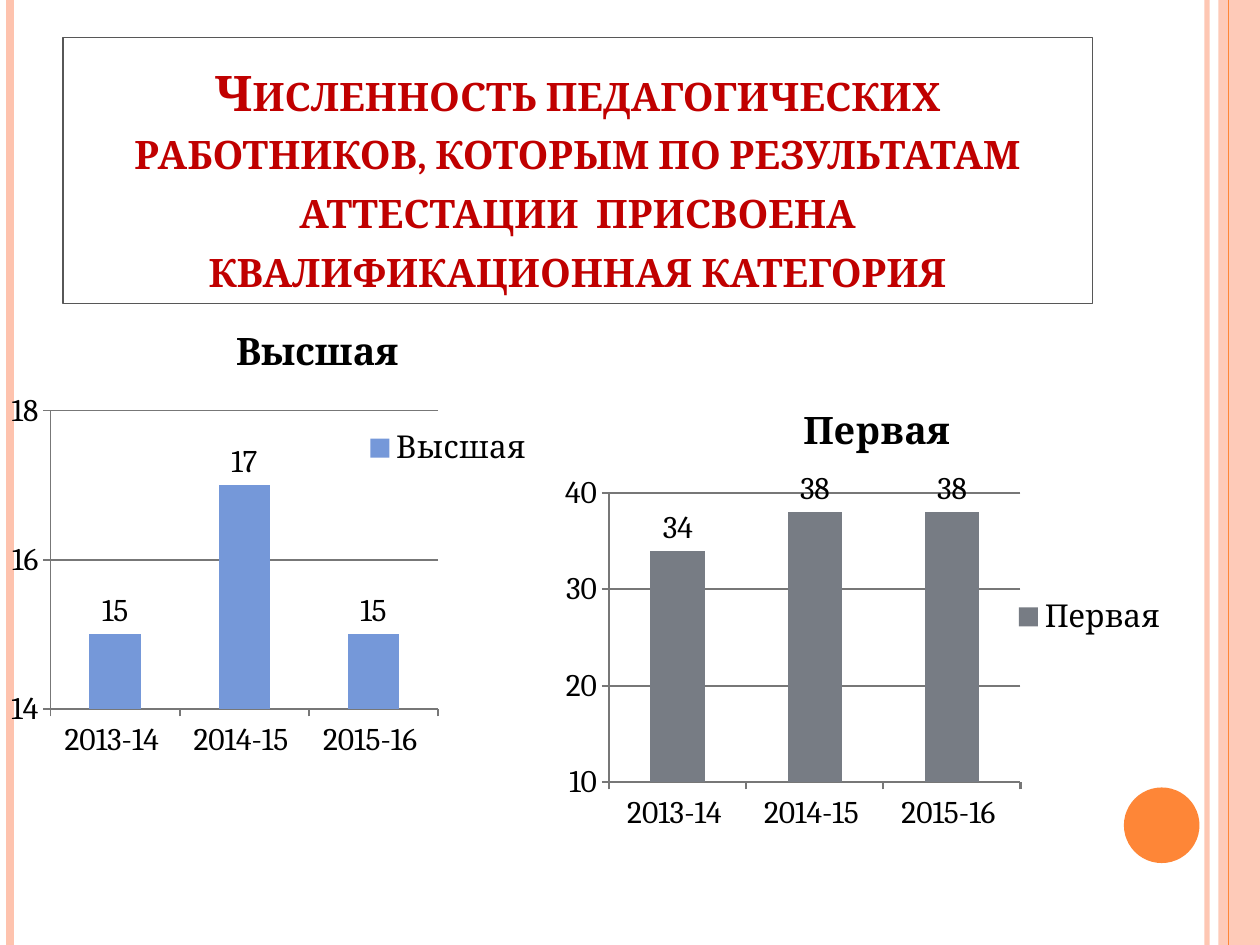
from lxml import etree
from pptx import Presentation
from pptx.chart.data import CategoryChartData
from pptx.dml.color import RGBColor
from pptx.enum.chart import XL_CHART_TYPE, XL_LABEL_POSITION, XL_LEGEND_POSITION, XL_TICK_MARK
from pptx.enum.shapes import MSO_CONNECTOR, MSO_SHAPE
from pptx.enum.text import MSO_ANCHOR, PP_ALIGN
from pptx.oxml import parse_xml
from pptx.oxml.ns import nsdecls, qn
from pptx.util import Inches, Pt

COLUMNS = XL_CHART_TYPE.COLUMN_CLUSTERED
LABEL_ABOVE = XL_LABEL_POSITION.OUTSIDE_END
LEGEND_RIGHT = XL_LEGEND_POSITION.RIGHT
TICK_OUT = XL_TICK_MARK.OUTSIDE
LINE = MSO_CONNECTOR.STRAIGHT
RECT = MSO_SHAPE.RECTANGLE
OVAL = MSO_SHAPE.OVAL
BOTTOM = MSO_ANCHOR.BOTTOM
CENTER = PP_ALIGN.CENTER

FONT = "Cambria"
COLORS = {"peach": "FEC3AE", "orange": "FE8637", "title": "C00000", "border": "575757",
          "text": "000000", "grid": "777777", "blue": "7598D9", "gray": "777C84"}
YEARS = ["2013-14 ", "2014-15 ", "2015-16 "]


def rgb(name):
    return RGBColor.from_string(COLORS[name])


def set_alpha(fill_owner, percent):
    color = fill_owner.find(".//" + qn("a:srgbClr"))
    etree.SubElement(color, qn("a:alpha")).set("val", str(percent * 1000))


def set_font(font, size, color, bold=False):
    font.name = FONT
    font.size = Pt(size)
    font.bold = bold
    font.color.rgb = rgb(color)


def add_rule(slide, x, height, color, width, alpha=100):
    line = slide.shapes.add_connector(LINE, Inches(x), 0, Inches(x), Inches(height))
    line.line.color.rgb = rgb(color)
    line.line.width = Pt(width)
    sp_pr = line._element.spPr
    etree.SubElement(sp_pr, qn("a:effectLst"))
    if alpha < 100:
        set_alpha(sp_pr, alpha)


def add_filled(slide, kind, box, color, alpha=100):
    sp = slide.shapes.add_shape(kind, *[Inches(v) for v in box])
    sp.shadow.inherit = False
    sp.fill.solid()
    sp.fill.fore_color.rgb = rgb(color)
    sp.line.fill.background()
    if alpha < 100:
        set_alpha(sp._element.spPr, alpha)


def add_frame(slide, width, height):
    add_rule(slide, width - 0.42, height, "peach", 3, 93)
    add_rule(slide, 0.08, height, "peach", 4.5)
    add_rule(slide, width - 0.25, height, "orange", 0.75)
    add_filled(slide, RECT, (width - 0.33, 0, 0.33, height), "peach", 87)
    add_rule(slide, width - 0.25, height, "orange", 0.25)
    add_filled(slide, OVAL, (width - 1.08, height - 1.25, 0.6, 0.6), "orange")


def add_title(slide, box, text):
    sp = slide.shapes.add_textbox(*[Inches(v) for v in box])
    sp.line.color.rgb = rgb("border")
    sp.line.width = Pt(0.75)
    tf = sp.text_frame
    tf.word_wrap = True
    tf.vertical_anchor = BOTTOM
    tf.text = text
    p = tf.paragraphs[0]
    p.alignment = CENTER
    r = p.runs[0]
    set_font(r.font, 28, "title", True)
    r.font._element.set("cap", "small")


def set_layout(parent, before, values, inner=False):
    for old in parent.findall(qn("c:layout")):
        parent.remove(old)
    target = '<c:layoutTarget val="inner"/>' if inner else ""
    modes = "".join(f'<c:{k}Mode val="edge"/>' for k in "xy")
    sizes = "".join(f'<c:{k} val="{v}"/>' for k, v in zip("xywh", values))
    layout = parse_xml(f'<c:layout {nsdecls("c")}><c:manualLayout>{target}{modes}{sizes}'
                       '</c:manualLayout></c:layout>')
    parent.find(qn(before)).addprevious(layout)


def style_axis(axis, width):
    axis.major_tick_mark = TICK_OUT
    axis.format.line.color.rgb = rgb("grid")
    axis.format.line.width = Pt(width)
    set_font(axis.tick_labels.font, 18, "text")


def add_category_chart(slide, box, name, values, color, scale, grid, plot_box, legend_box):
    data = CategoryChartData()
    data.categories = YEARS
    data.add_series(name, values)
    chart = slide.shapes.add_chart(COLUMNS, *[Inches(v) for v in box], data).chart
    set_font(chart.font, 18, "text")

    chart.has_title = True
    tf = chart.chart_title.text_frame
    tf.text = name
    set_font(tf.paragraphs[0].runs[0].font, 21.6, "text", True)
    chart.chart_title.include_in_layout = False

    chart.has_legend = True
    chart.legend.position = LEGEND_RIGHT
    chart.legend.include_in_layout = False
    set_font(chart.legend.font, 18, "text")
    set_layout(chart.legend._element, "c:overlay", legend_box)

    style_axis(chart.category_axis, grid)
    axis = chart.value_axis
    style_axis(axis, grid)
    axis.minimum_scale, axis.maximum_scale, axis.major_unit = scale
    axis.major_gridlines.format.line.color.rgb = rgb("grid")
    axis.major_gridlines.format.line.width = Pt(grid)

    plot = chart.plots[0]
    plot.gap_width = 150
    plot.vary_by_categories = False
    set_layout(plot._element.getparent(), "c:barChart", plot_box, True)
    series = plot.series[0]
    series.format.fill.solid()
    series.format.fill.fore_color.rgb = rgb(color)
    labels = series.data_labels
    labels.show_value = True
    labels.position = LABEL_ABOVE
    set_font(labels.font, 18, "text")


def main():
    prs = Presentation()
    prs.slide_width, prs.slide_height = Inches(10), Inches(7.5)
    slide = prs.slides.add_slide(prs.slide_layouts[6])
    add_frame(slide, 10, 7.5)
    add_title(slide, (0.5, 0.3, 8.17, 2.11),
              "Численность педагогических работников, которым по результатам "
              "аттестации  присвоена квалификационная категория")
    add_category_chart(slide, (0, 2.41, 5.04, 3.7), "Высшая", (15, 17, 15), "blue",
                       (14, 18, 2), 0.75, (0.08, 0.23, 0.61, 0.64), (0.57, 0.26, 0.27, 0.1))
    add_category_chart(slide, (4.37, 3.04, 5.18, 3.64), "Первая", (34, 38, 38), "gray",
                       (10, 40, 10), 1.25, (0.09, 0.24, 0.63, 0.63), (0.7, 0.46, 0.25, 0.1))
    prs.save("out.pptx")


if __name__ == "__main__":
    main()
